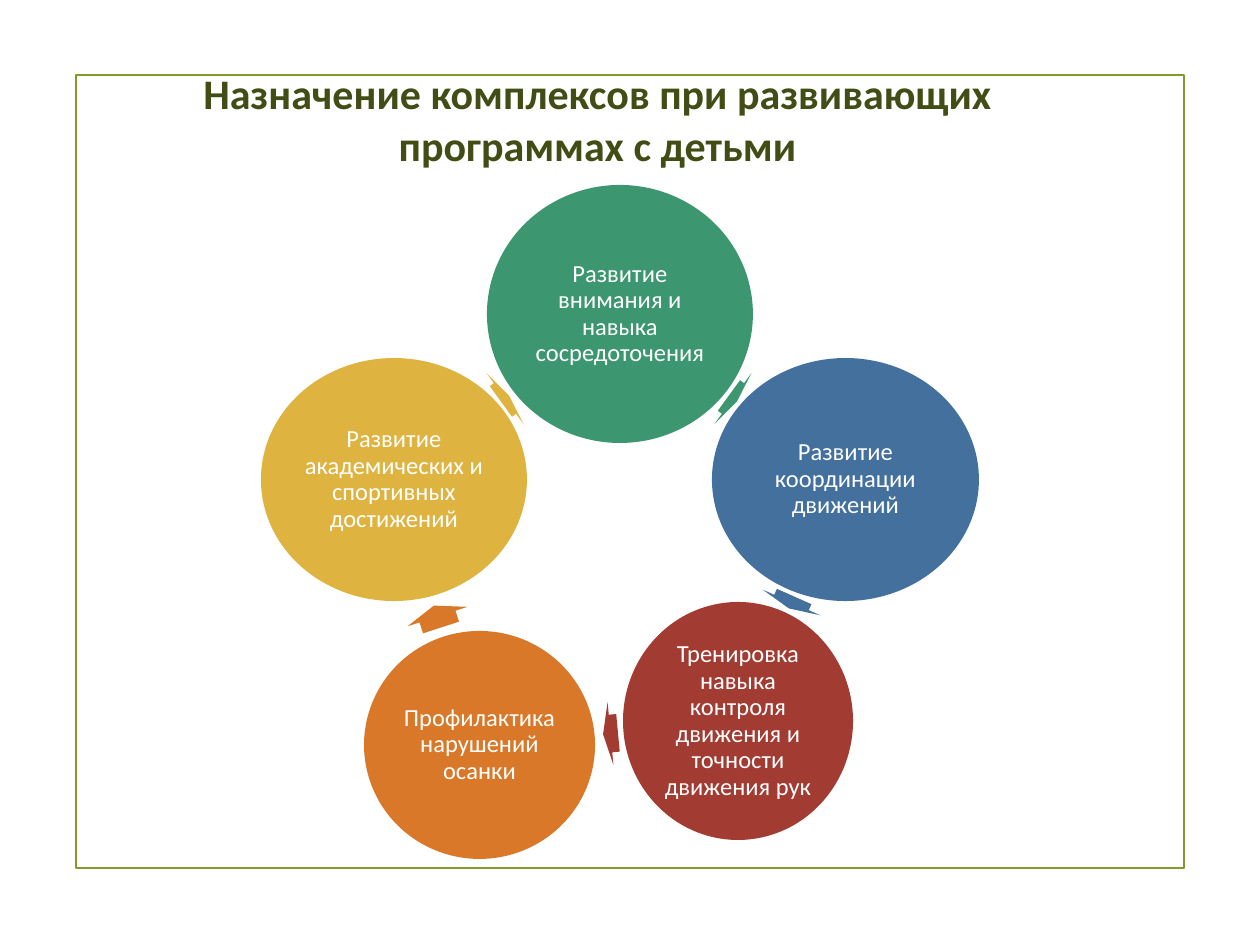
import pptx
import pptx.dml.color
import pptx.enum.shapes
import pptx.enum.text
import pptx.util

SHAPE = pptx.enum.shapes.MSO_SHAPE
ALIGN = pptx.enum.text.PP_ALIGN
ANCHOR = pptx.enum.text.MSO_ANCHOR
PX_PER_INCH = 126


def px(length):
    return pptx.util.Emu(round(length * 914400 / PX_PER_INCH))


def color(hex_text):
    return pptx.dml.color.RGBColor.from_string(hex_text)


class CycleSlide:
    font_name = "Calibri"

    def __init__(self, deck):
        self.page = deck.slides.add_slide(deck.slide_layouts[6])

    def shape(self, kind, place, fill=None, line=None):
        shape = self.page.shapes.add_shape(kind, *map(px, place))
        shape.shadow.inherit = False
        if fill:
            shape.fill.solid()
            shape.fill.fore_color.rgb = color(fill)
        else:
            shape.fill.background()
        if line:
            shape.line.color.rgb = color(line)
            shape.line.width = pptx.util.Pt(1.25)
        else:
            shape.line.fill.background()
        return shape

    def set_text(self, shape, text, size, ink, spacing, margins, anchor, bold=False):
        frame = shape.text_frame
        frame.word_wrap = True
        frame.vertical_anchor = anchor
        (frame.margin_left, frame.margin_top,
         frame.margin_right, frame.margin_bottom) = map(px, margins)
        frame.text = text
        para = frame.paragraphs[0]
        para.alignment = ALIGN.CENTER
        para.line_spacing = spacing
        font = para.runs[0].font
        font.name = self.font_name
        font.size = pptx.util.Pt(size)
        font.bold = bold
        font.color.rgb = color(ink)

    def title(self, text, place):
        box = self.page.shapes.add_textbox(*map(px, place))
        # The wider right margin shifts the heading left of centre
        self.set_text(box, text, 24, "414D15", 1.03, (12, 6, 62, 6), ANCHOR.TOP, bold=True)

    def circle(self, text, place, fill):
        circle = self.shape(SHAPE.OVAL, place, fill)
        self.set_text(circle, text, 14, "FFFFFF", 0.9, (2, 2, 2, 2), ANCHOR.MIDDLE)

    def arrow(self, place, rotation, fill):
        arrow = self.shape(SHAPE.RIGHT_ARROW, place, fill)
        arrow.adjustments[0] = 0.6
        arrow.adjustments[1] = 0.5
        arrow.rotation = rotation


# Each step: text, colour, circle place, arrow place, arrow rotation
STEPS = [
    ("Развитие внимания и навыка сосредоточения", "3C9770",
     (487, 185, 266, 258), (728, 367, 10, 63), 36),
    ("Развитие координации движений", "44709D",
     (712, 358, 267, 243), (785, 571, 13, 63), 114),
    ("Тренировка навыка контроля движения и точности движения рук", "A23C33",
     (623, 602, 230, 238), (603, 702, 15, 63), 174.7),
    ("Профилактика нарушений осанки", "D97828",
     (364, 631, 231, 228), (426, 585, 23, 63), 252),
    ("Развитие академических и спортивных достижений", "DEB340",
     (261, 358, 266, 243), (500, 367, 10, 63), 324),
]


def main():
    deck = pptx.Presentation()
    deck.slide_width, deck.slide_height = px(1260), px(945)
    slide = CycleSlide(deck)

    # Frame and heading
    slide.shape(SHAPE.RECTANGLE, (76, 75, 1108, 793), line="83992A")
    slide.title("Назначение комплексов при развивающих программах с детьми",
                (88, 60, 1069, 116))

    # Cycle of circles, each followed by the arrow to the next
    for text, fill, circle_place, arrow_place, rotation in STEPS:
        slide.circle(text, circle_place, fill)
        slide.arrow(arrow_place, rotation, fill)

    deck.save("out.pptx")


if __name__ == "__main__":
    main()
